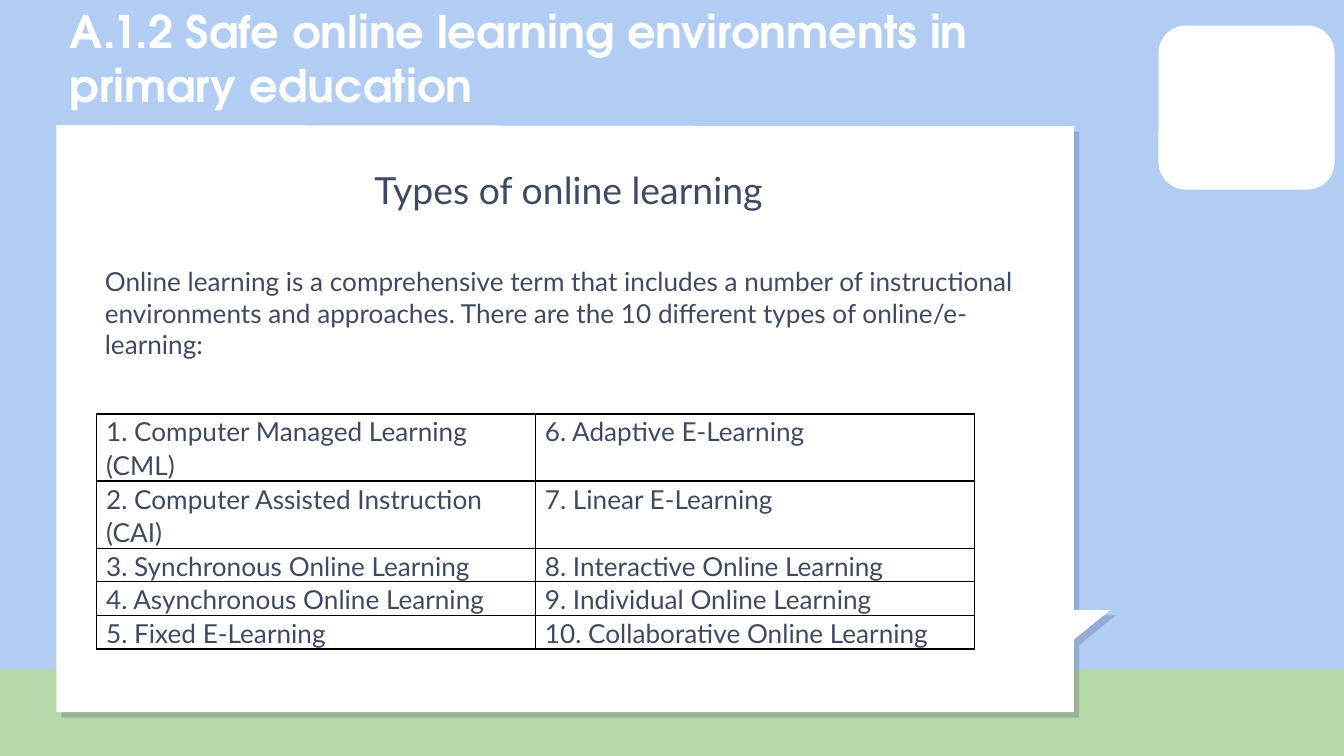
from lxml.etree import SubElement
from pptx import Presentation
from pptx.dml.color import RGBColor
from pptx.enum.shapes import MSO_SHAPE
from pptx.enum.text import MSO_ANCHOR, PP_ALIGN
from pptx.oxml.ns import qn
from pptx.util import Inches, Pt

SKY, GRASS, WHITE = "B1CDF4", "B6D7A8", "FFFFFF"
SHADE, INK, BLACK = "0D0138", "3E4A63", "000000"
BUBBLE = [(0.42, 0.93), (0.42, 5.3), (7.99, 5.3), (7.99, 4.76),
          (8.26, 4.54), (7.99, 4.54), (7.99, 0.94)]
TYPES = [
    ("1. Computer Managed Learning (CML)", "6. Adaptive E-Learning"),
    ("2. Computer Assisted Instruction (CAI)", "7. Linear E-Learning"),
    ("3. Synchronous Online Learning", "8. Interactive Online Learning"),
    ("4. Asynchronous Online Learning", "9. Individual Online Learning"),
    ("5. Fixed E-Learning", "10. Collaborative Online Learning"),
]


def paint(fill, color):
    fill.solid()
    fill.fore_color.rgb = RGBColor.from_string(color)


def finish(shape, color):
    """Give a shape a plain fill with no line or shadow."""
    paint(shape.fill, color)
    shape.line.fill.background()
    shape.shadow.inherit = False


def add_block(slide, kind, box, color):
    finish(slide.shapes.add_shape(kind, *map(Inches, box)), color)


def add_bubble(slide, color, shift=0, alpha=None):
    points = [(Inches(x + shift), Inches(y + shift)) for x, y in BUBBLE]
    pen = slide.shapes.build_freeform(*points[0])
    pen.add_line_segments(points[1:], close=True)
    shape = pen.convert_to_shape()
    finish(shape, color)
    if alpha:
        tone = shape._element.spPr.find(qn("a:solidFill"))[0]
        SubElement(tone, qn("a:alpha"), val=str(alpha * 1000))


def style(para, size, color=INK, face="Lato", bold=False):
    font = para.font
    font.name, font.size, font.bold = face, Pt(size), bold
    font.color.rgb = RGBColor.from_string(color)


def add_text(slide, box, anchor=MSO_ANCHOR.TOP):
    frame = slide.shapes.add_textbox(*map(Inches, box)).text_frame
    frame.word_wrap = True
    frame.vertical_anchor = anchor
    frame.margin_left = frame.margin_right = Inches(0.1)
    frame.margin_top = frame.margin_bottom = Inches(0.1)
    return frame


def add_title(slide):
    para = add_text(slide, (0.42, 0, 7.57, 0.93), MSO_ANCHOR.BOTTOM).paragraphs[0]
    para.text = "A.1.2 Safe online learning environments in primary education"
    style(para, 24, WHITE, "TeX Gyre Adventor", True)


def add_intro(slide):
    frame = add_text(slide, (0.64, 1.14, 7.14, 1.41))
    frame.margin_left = Inches(0.14)
    head = frame.paragraphs[0]
    head.text = "Types of online learning"
    head.alignment = PP_ALIGN.CENTER
    style(head, 20)
    para = frame.add_paragraph()
    para.text = ("Online learning is a comprehensive term that includes a number of "
                 "instructional environments and approaches. There are the 10 "
                 "different types of online/e-learning:")
    para.space_before = Pt(29)
    style(para, 14)


def add_borders(cell):
    props = cell._tc.get_or_add_tcPr()
    for spot, side in enumerate(("lnL", "lnR", "lnT", "lnB")):
        line = props.makeelement(qn(f"a:{side}"), {"w": str(Pt(0.75))})
        props.insert(spot, line)
        fill = SubElement(line, qn("a:solidFill"))
        SubElement(fill, qn("a:srgbClr"), val=BLACK)


def fill_cell(cell, text):
    cell.margin_left = cell.margin_right = Inches(0.07)
    cell.margin_top = cell.margin_bottom = 0
    cell.fill.background()
    para = cell.text_frame.paragraphs[0]
    para.text = text
    para.line_spacing = 1.07
    style(para, 14)
    add_borders(cell)


def add_types(slide):
    box = map(Inches, (0.72, 3.08, 6.53, 1.25))
    table = slide.shapes.add_table(len(TYPES), 2, *box).table
    table.first_row = table.horz_banding = False
    for row, texts in zip(table.rows, TYPES):
        for cell, text in zip(row.cells, texts):
            fill_cell(cell, text)


def main():
    deck = Presentation()
    deck.slide_width = Inches(10)
    deck.slide_height = deck.slide_width * 9 // 16
    slide = deck.slides.add_slide(deck.slide_layouts[6])
    paint(slide.background.fill, SKY)
    add_block(slide, MSO_SHAPE.RECTANGLE, (0, 4.98, 10, 0.65), GRASS)
    add_bubble(slide, SHADE, shift=0.04, alpha=17)
    add_bubble(slide, WHITE)
    add_block(slide, MSO_SHAPE.ROUNDED_RECTANGLE, (8.62, 0.19, 1.31, 1.22), WHITE)
    add_title(slide)
    add_intro(slide)
    add_types(slide)
    deck.save("out.pptx")


if __name__ == "__main__":
    main()
